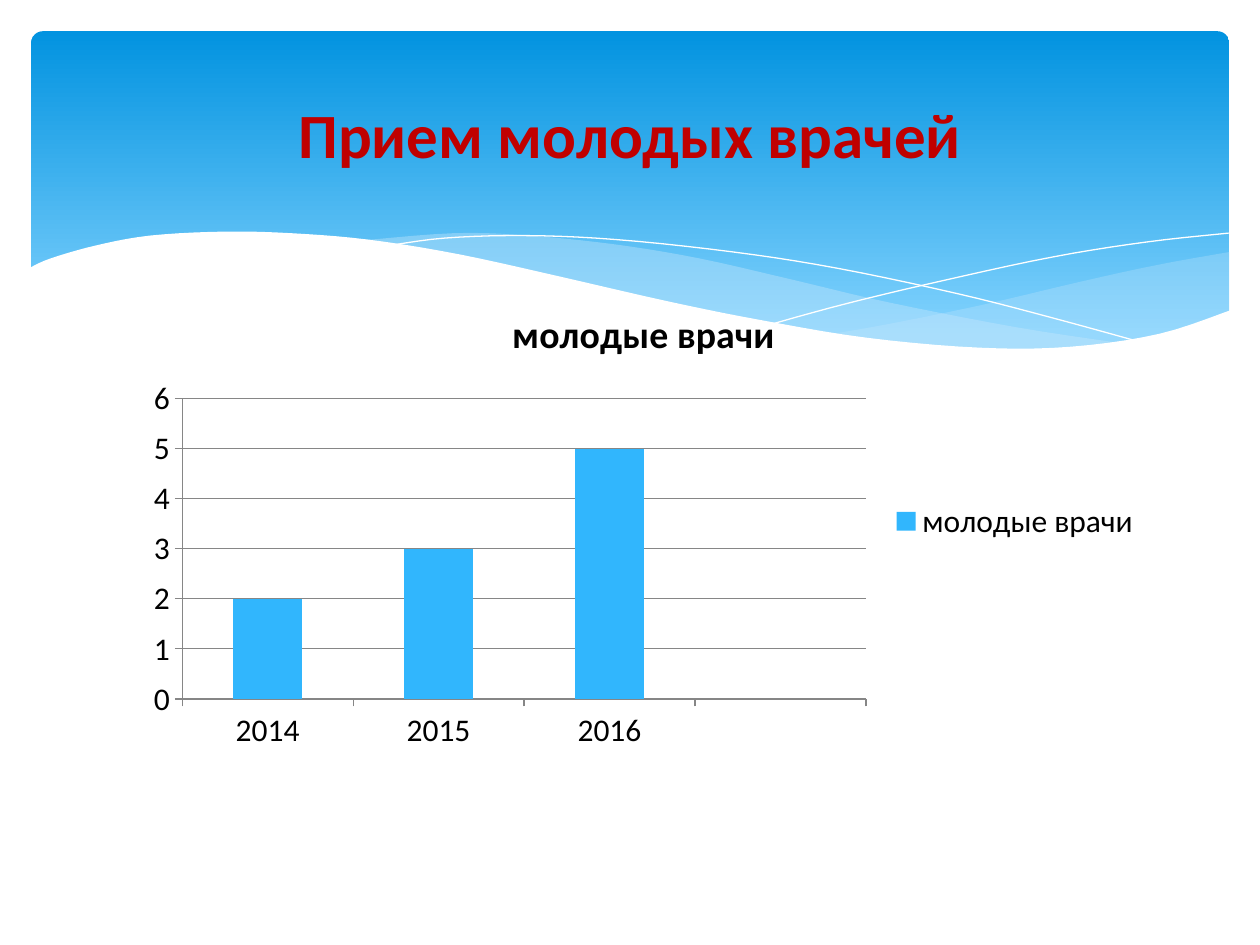
from lxml import etree
from pptx import Presentation
from pptx.chart.data import CategoryChartData
from pptx.dml.color import RGBColor
from pptx.enum import chart as ch, shapes, text
from pptx.oxml.ns import qn
from pptx.util import Cm, Pt

FONT = "Calibri"
TITLE = "Прием молодых врачей"
SERIES = "молодые врачи"
YEARS = ["2014", "2015", "2016", ""]
DOCTORS = [2, 3, 5, None]

# Each outline is a list of curves, given by key points in cm
RIGHT_WAVE = [
    [(24.79, 5.08), (23.39, 5.33), (21.87, 5.66), (19.79, 6.15), (17.93, 6.53), (16.79, 6.73)],
    [(16.79, 6.73), (17.91, 6.88), (19.23, 7.01), (20.68, 7.06), (21.92, 6.99), (23.19, 6.78),
     (24.1, 6.53), (24.79, 6.27)],
]
MIDDLE_WAVE = [
    [(22.68, 6.93), (20.5, 6.6), (17.93, 6.1), (15.98, 5.64), (14.1, 5.21), (12.42, 4.93),
     (10.67, 4.75), (9.17, 4.7), (7.26, 4.85)],
    [(7.26, 4.85), (9.19, 5.16), (11.4, 5.64), (13.46, 6.1), (15.7, 6.55), (17.65, 6.86),
     (19.33, 7.04), (20.78, 7.06), (22.68, 6.93)],
]
FALLING_LINE = [[(7.85, 4.95), (8.97, 4.8), (10.57, 4.75), (12.42, 4.83), (14.78, 5.08),
                 (16.89, 5.41), (19.3, 5.92), (21.11, 6.38), (23.04, 6.91)]]
RISING_LINE = [[(15.57, 6.53), (17.07, 6.12), (19, 5.66), (21.23, 5.18), (23.11, 4.88),
                (24.77, 4.7)]]
WHITE_WAVE = [
    [(24.82, 6.25), (23.37, 6.73), (21.59, 6.99), (19.76, 7.01), (17.48, 6.81), (15.32, 6.45),
     (13.44, 6.07), (11.35, 5.59), (9.27, 5.13), (7.42, 4.83), (5.84, 4.7), (4.5, 4.67),
     (3.02, 4.75), (1.93, 4.95), (1.02, 5.21), (0.58, 5.41)],
    [(0.58, 8.36), (24.82, 8.36)],
]
# outline, fill, opacity in percent, line
WAVES = [
    (RIGHT_WAVE, "C6E7FC", 29, None),
    (MIDDLE_WAVE, "C6E7FC", 40, None),
    (FALLING_LINE, None, 100, "FFFFFF"),
    (RISING_LINE, None, 100, "FFFFFF"),
    (WHITE_WAVE, "FFFFFF", 100, None),
]


def rgb(value):
    return RGBColor.from_string(value)


def smooth(points, steps=5):
    """Catmull-Rom curve through the points; two points stay a straight line."""
    if len(points) < 3:
        return points
    padded = [points[0], *points, points[-1]]
    curve = []
    for a, b, c, d in zip(padded, padded[1:], padded[2:], padded[3:]):
        for t in (i / steps for i in range(steps)):
            curve.append(tuple(
                q + t * (r - p) / 2 + t**2 * (2 * p - 5 * q + 4 * r - u) / 2
                + t**3 * (3 * q - p - 3 * r + u) / 2
                for p, q, r, u in zip(a, b, c, d)))
    return curve + [points[-1]]


def add_wave(s, curves, fill, opacity, line):
    points = [(Cm(x), Cm(y)) for curve in curves for x, y in smooth(curve)]
    builder = s.shapes.build_freeform(*points[0])
    builder.add_line_segments(points[1:], close=fill is not None)
    sp = builder.convert_to_shape()
    sp.shadow.inherit = False
    if fill:
        sp.fill.solid()
        sp.fill.fore_color.rgb = rgb(fill)
        if opacity < 100:
            color = sp.fill._xPr.find(".//" + qn("a:srgbClr"))
            etree.SubElement(color, qn("a:alpha"), val=str(opacity * 1000))
    else:
        sp.fill.background()
    if line:
        sp.line.color.rgb = rgb(line)
        sp.line.width = Pt(0)
    else:
        sp.line.fill.background()


def add_banner(s):
    sp = s.shapes.add_shape(shapes.MSO_SHAPE.ROUNDED_RECTANGLE,
                            Cm(0.63), Cm(0.63), Cm(24.15), Cm(6.86))
    sp.adjustments[0] = 0.034
    sp.shadow.inherit = False
    sp.line.fill.background()
    sp.fill.gradient()
    sp.fill.gradient_angle = 270
    for stop, position, color in zip(sp.fill.gradient_stops, (0, 0.9), ("0293E0", "83D3FE")):
        stop.position = position
        stop.color.rgb = rgb(color)


def add_title(s):
    title = s.shapes.title
    title.left, title.top, title.width, title.height = Cm(1.27), Cm(0.94), Cm(22.86), Cm(3.48)
    title.text_frame.text = TITLE
    title.text_frame.vertical_anchor = text.MSO_ANCHOR.MIDDLE
    p = title.text_frame.paragraphs[0]
    p.alignment = text.PP_ALIGN.CENTER
    p.font.name, p.font.size, p.font.bold = FONT, Pt(36), True
    p.font.color.rgb = rgb("C00000")
    s.shapes._spTree.append(title._element)  # bring in front of the banner


def add_doctors_chart(s):
    data = CategoryChartData()
    data.categories = YEARS
    data.add_series(SERIES, DOCTORS)
    chart = s.shapes.add_chart(ch.XL_CHART_TYPE.COLUMN_STACKED,
                               Cm(2.69), Cm(5.72), Cm(20.57), Cm(9.58), data).chart
    chart.font.name, chart.font.size = FONT, Pt(18)
    chart.font.color.rgb = rgb("000000")

    chart.has_title = True
    chart.chart_title.include_in_layout = False
    chart.chart_title.text_frame.text = SERIES
    font = chart.chart_title.text_frame.paragraphs[0].font
    font.name, font.size, font.bold = FONT, Pt(21.6), True
    font.color.rgb = rgb("000000")

    chart.has_legend = True
    chart.legend.position = ch.XL_LEGEND_POSITION.RIGHT
    chart.legend.include_in_layout = False

    plot = chart.plots[0]
    plot.gap_width, plot.overlap, plot.vary_by_categories = 150, 100, False
    fill = plot.series[0].format.fill
    fill.solid()
    fill.fore_color.rgb = rgb("31B6FD")

    value_axis = chart.value_axis
    value_axis.has_major_gridlines = True
    value_axis.minimum_scale, value_axis.maximum_scale, value_axis.major_unit = 0, 6, 1
    for axis in (chart.category_axis, value_axis):
        axis.major_tick_mark = ch.XL_TICK_MARK.OUTSIDE
    for part in (chart.category_axis, value_axis, value_axis.major_gridlines):
        part.format.line.color.rgb = rgb("868686")
        part.format.line.width = Pt(0.75)


prs = Presentation()
prs.slide_width, prs.slide_height = Cm(25.4), Cm(19.05)
s = prs.slides.add_slide(prs.slide_layouts[5])
add_banner(s)
for wave in WAVES:
    add_wave(s, *wave)
add_title(s)
add_doctors_chart(s)
prs.save("out.pptx")
